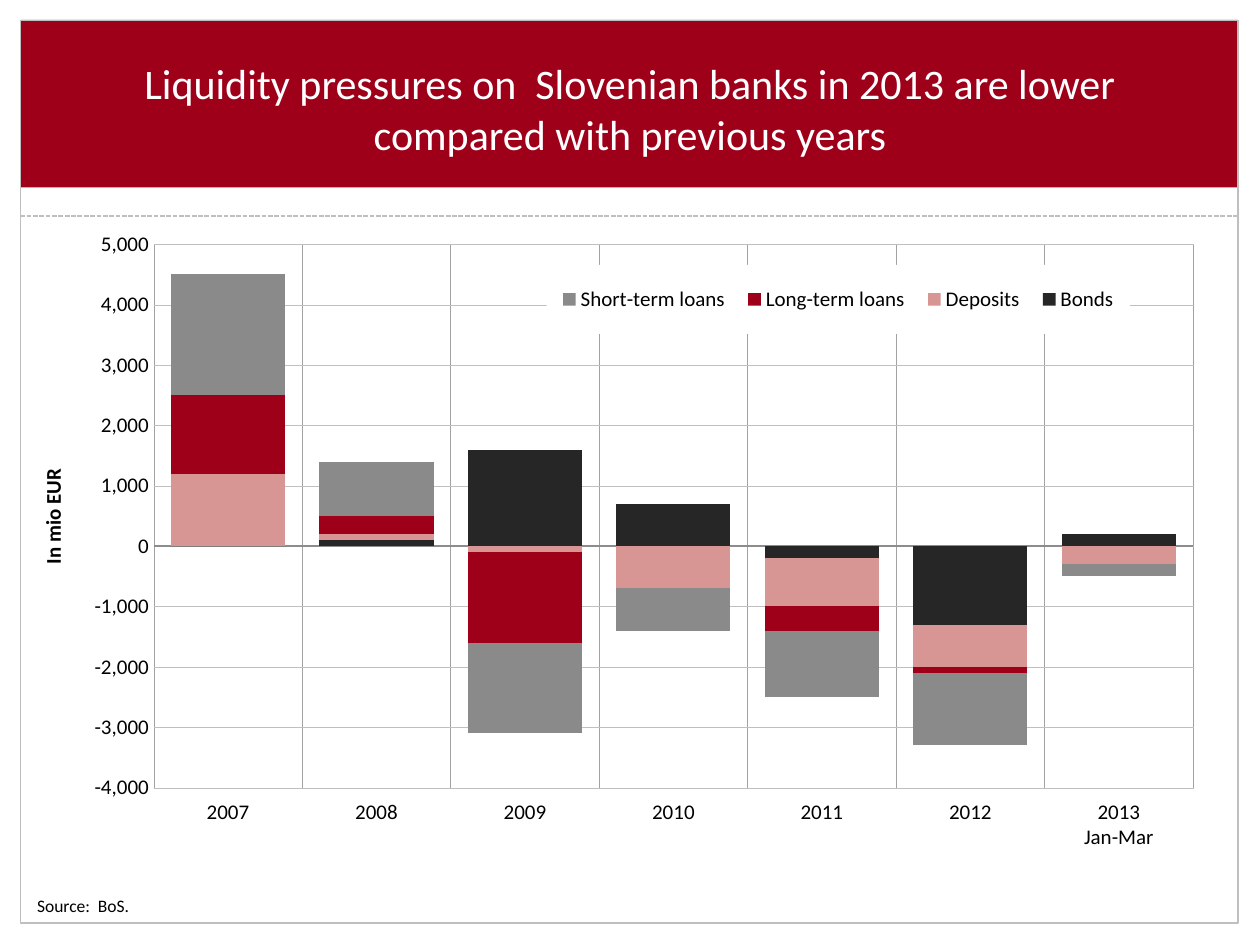
from dataclasses import dataclass
from typing import Optional

from lxml import etree
from pptx import Presentation, util as u
from pptx.chart.data import CategoryChartData
from pptx.dml.color import RGBColor
from pptx.enum import chart as charts, dml, shapes, text
from pptx.oxml import parse_xml
from pptx.oxml.ns import nsdecls, qn

FONT = "Calibri"
RED = RGBColor(0x9E, 0x00, 0x1A)
PINK = RGBColor(0xD7, 0x96, 0x94)
CHARCOAL = RGBColor(0x26, 0x26, 0x26)
GREY = RGBColor(0x8A, 0x8A, 0x8A)
AXIS_GREY = RGBColor(0x8C, 0x8C, 0x8C)
GRID_GREY = RGBColor(0xA2, 0xA2, 0xA2)
LIGHT_GREY = RGBColor(0xBF, 0xBF, 0xBF)
WHITE = RGBColor(0xFF, 0xFF, 0xFF)
BLACK = RGBColor(0x00, 0x00, 0x00)


@dataclass(frozen=True)
class Area:
    """Left, top, width and height in centimetres."""
    left: float
    top: float
    width: float
    height: float

    def lengths(self) -> tuple:
        return tuple(u.Cm(v) for v in (self.left, self.top, self.width, self.height))


@dataclass(frozen=True)
class Flow:
    name: str
    values: tuple
    color: RGBColor


MARGIN_BANDS = (
    Area(0, 18.62, 25.4, 0.43),
    Area(0, 0, 25.4, 0.43),
    Area(24.99, 0, 0.41, 19),
    Area(0.41, 3.58, 24.54, 0.84),
)
YEARS = ("2007", "2008", "2009", "2010", "2011", "2012", "2013\nJan-Mar")
FLOWS = (
    Flow("Bonds", (0, 100, 1600, 700, -200, -1300, 200), CHARCOAL),
    Flow("Deposits", (1200, 100, -100, -700, -800, -700, -300), PINK),
    Flow("Long-term loans", (1300, 300, -1500, 0, -400, -100, 0), RED),
    Flow("Short-term loans", (2000, 900, -1500, -700, -1100, -1200, -200), GREY),
)


def style_line(line, color: RGBColor, width: float, dash=None) -> None:
    line.color.rgb = color
    line.width = u.Pt(width)
    if dash is not None:
        line.dash_style = dash


def add_rectangle(page, area: Area, fill: Optional[RGBColor] = None,
                  outline: Optional[RGBColor] = None) -> None:
    box = page.shapes.add_shape(shapes.MSO_SHAPE.RECTANGLE, *area.lengths())
    box.shadow.inherit = False
    if fill is None:
        box.fill.background()
    else:
        box.fill.solid()
        box.fill.fore_color.rgb = fill
    if outline is None:
        box.line.fill.background()
    else:
        style_line(box.line, outline, 0.75)


def add_divider(page, left: float, right: float, top: float) -> None:
    line = page.shapes.add_connector(
        shapes.MSO_CONNECTOR.STRAIGHT, u.Cm(left), u.Cm(top), u.Cm(right), u.Cm(top))
    style_line(line.line, LIGHT_GREY, 0.9, dml.MSO_LINE.SQUARE_DOT)
    etree.SubElement(line._element.spPr, qn("a:effectLst"))


def add_label(page, area: Area, words: str, size: int, color: RGBColor,
              align=text.PP_ALIGN.LEFT, anchor=text.MSO_ANCHOR.TOP) -> None:
    frame = page.shapes.add_textbox(*area.lengths()).text_frame
    frame.word_wrap = True
    frame.vertical_anchor = anchor
    para = frame.paragraphs[0]
    para.text = words
    para.alignment = align
    para.font.name = FONT
    para.font.size = u.Pt(size)
    para.font.color.rgb = color


def place(parent, after: Optional[str], inner: bool = False, **fractions: float) -> None:
    """Fix a chart part at fractions of the chart's size."""
    for old in parent.findall(qn("c:layout")):
        parent.remove(old)
    target = '<c:layoutTarget val="inner"/>' if inner else ""
    modes = '<c:xMode val="edge"/><c:yMode val="edge"/>'
    sizes = "".join(f'<c:{key} val="{value}"/>' for key, value in fractions.items())
    layout = parse_xml(f'<c:layout {nsdecls("c")}><c:manualLayout>{target}{modes}{sizes}'
                       '</c:manualLayout></c:layout>')
    if after is None:
        parent.insert(0, layout)
    else:
        parent.find(qn(after)).addnext(layout)


def style_axis(axis, grid_color: RGBColor, grid_width: float) -> None:
    axis.major_tick_mark = axis.minor_tick_mark = charts.XL_TICK_MARK.NONE
    axis.has_major_gridlines = True
    style_line(axis.major_gridlines.format.line, grid_color, grid_width,
               dml.MSO_LINE.ROUND_DOT)


def style_legend(chart) -> None:
    chart.has_legend = True
    legend = chart.legend
    legend.position = charts.XL_LEGEND_POSITION.RIGHT
    legend.include_in_layout = False
    element = legend._element
    place(element, "c:legendPos", x=0.43, y=0.07, w=0.49, h=0.11)
    element.find(qn("c:overlay")).addnext(parse_xml(
        f'<c:spPr {nsdecls("c", "a")}><a:solidFill><a:srgbClr val="{WHITE}"/>'
        '</a:solidFill><a:ln><a:noFill/></a:ln></c:spPr>'))


def add_flow_chart(page, area: Area) -> None:
    data = CategoryChartData()
    data.categories = YEARS
    for flow in FLOWS:
        data.add_series(flow.name, flow.values)
    chart = page.shapes.add_chart(
        charts.XL_CHART_TYPE.COLUMN_STACKED, *area.lengths(), data).chart
    chart.has_title = False
    chart.font.name = FONT
    chart.font.size = u.Pt(12)
    chart.font.color.rgb = BLACK

    plot = chart.plots[0]
    plot.gap_width, plot.overlap = 30, 100
    plot.vary_by_categories = False
    for series, flow in zip(plot.series, FLOWS):
        series.invert_if_negative = False
        series.format.fill.solid()
        series.format.fill.fore_color.rgb = flow.color

    years, amounts = chart.category_axis, chart.value_axis
    style_axis(years, GRID_GREY, 0.25)
    years.tick_label_position = charts.XL_TICK_LABEL_POSITION.LOW
    style_line(years.format.line, AXIS_GREY, 0)

    style_axis(amounts, LIGHT_GREY, 0.05)
    amounts.minimum_scale, amounts.maximum_scale = -4000, 5000
    amounts.major_unit = 1000
    amounts.tick_labels.number_format = "#,##0"
    amounts.tick_labels.number_format_is_linked = False
    amounts.format.line.fill.background()
    para = amounts.axis_title.text_frame.paragraphs[0]
    para.text = "In mio EUR"
    para.font.name = FONT
    para.font.size = u.Pt(12)
    para.font.bold = True
    para.font.color.rgb = BLACK
    place(amounts.axis_title._element, "c:tx", x=0, y=0.39)

    style_legend(chart)
    plot_area = chart._chartSpace.find(qn("c:chart")).find(qn("c:plotArea"))
    place(plot_area, None, inner=True, x=0.1, y=0.037, w=0.873, h=0.868)


def main() -> None:
    deck = Presentation()
    deck.slide_width, deck.slide_height = u.Cm(25.4), u.Cm(19.05)
    page = deck.slides.add_slide(deck.slide_layouts[6])
    for band in MARGIN_BANDS:
        add_rectangle(page, band, fill=WHITE)
    add_rectangle(page, Area(0.42, 0.4, 24.54, 3.38), fill=RED)
    add_divider(page, 0.41, 24.94, 4.36)
    add_rectangle(page, Area(0.42, 0.42, 24.54, 18.19), outline=LIGHT_GREY)
    add_label(page, Area(1, 0.98, 23.4, 2.4),
              "Liquidity pressures on  Slovenian banks in 2013 are lower "
              "compared with previous years",
              24, WHITE, text.PP_ALIGN.CENTER, text.MSO_ANCHOR.MIDDLE)
    add_label(page, Area(0.5, 17.92, 20.83, 0.68), "Source:  BoS.", 10, BLACK)
    add_flow_chart(page, Area(0.7, 4.46, 24, 12.67))
    deck.save("out.pptx")


if __name__ == "__main__":
    main()
